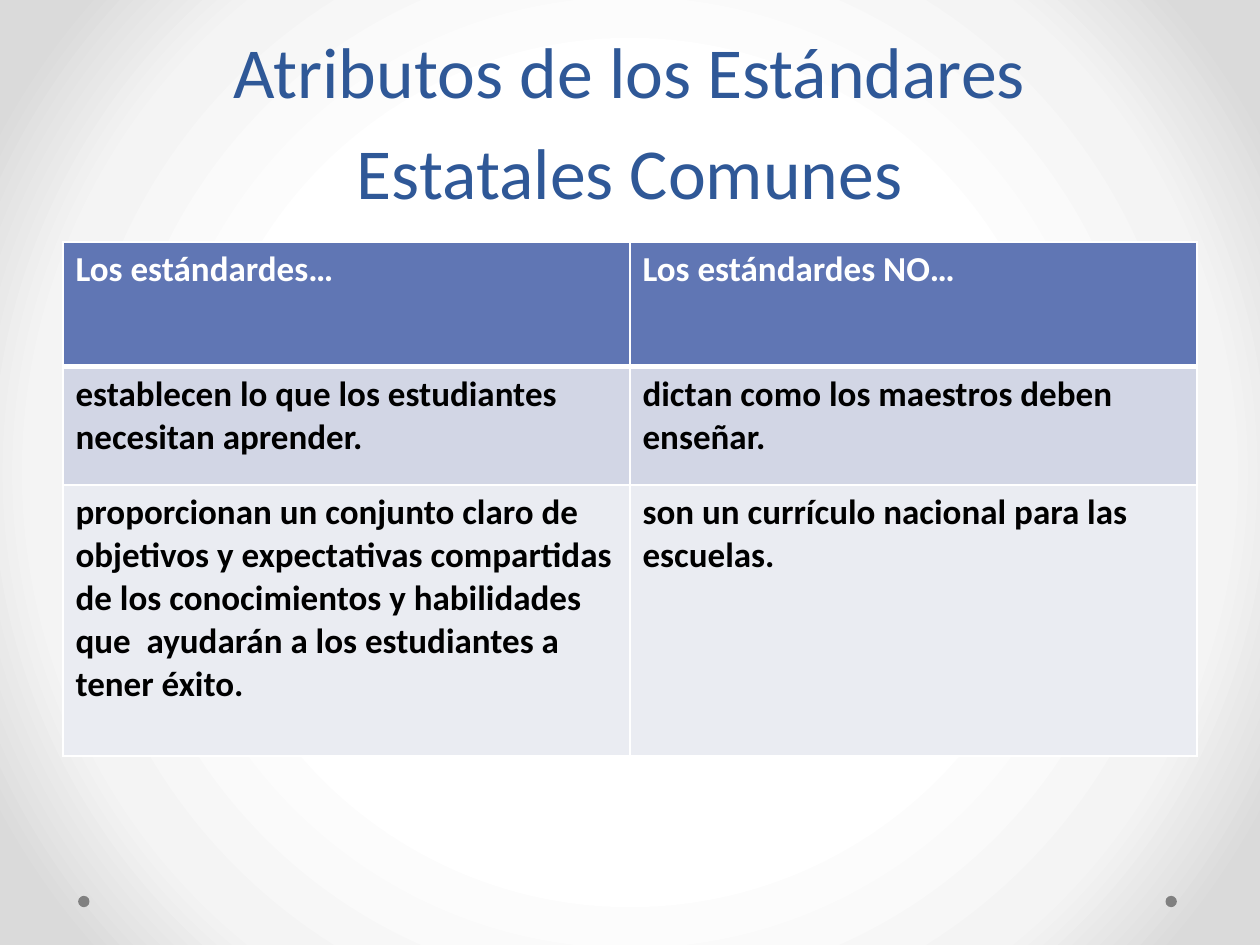
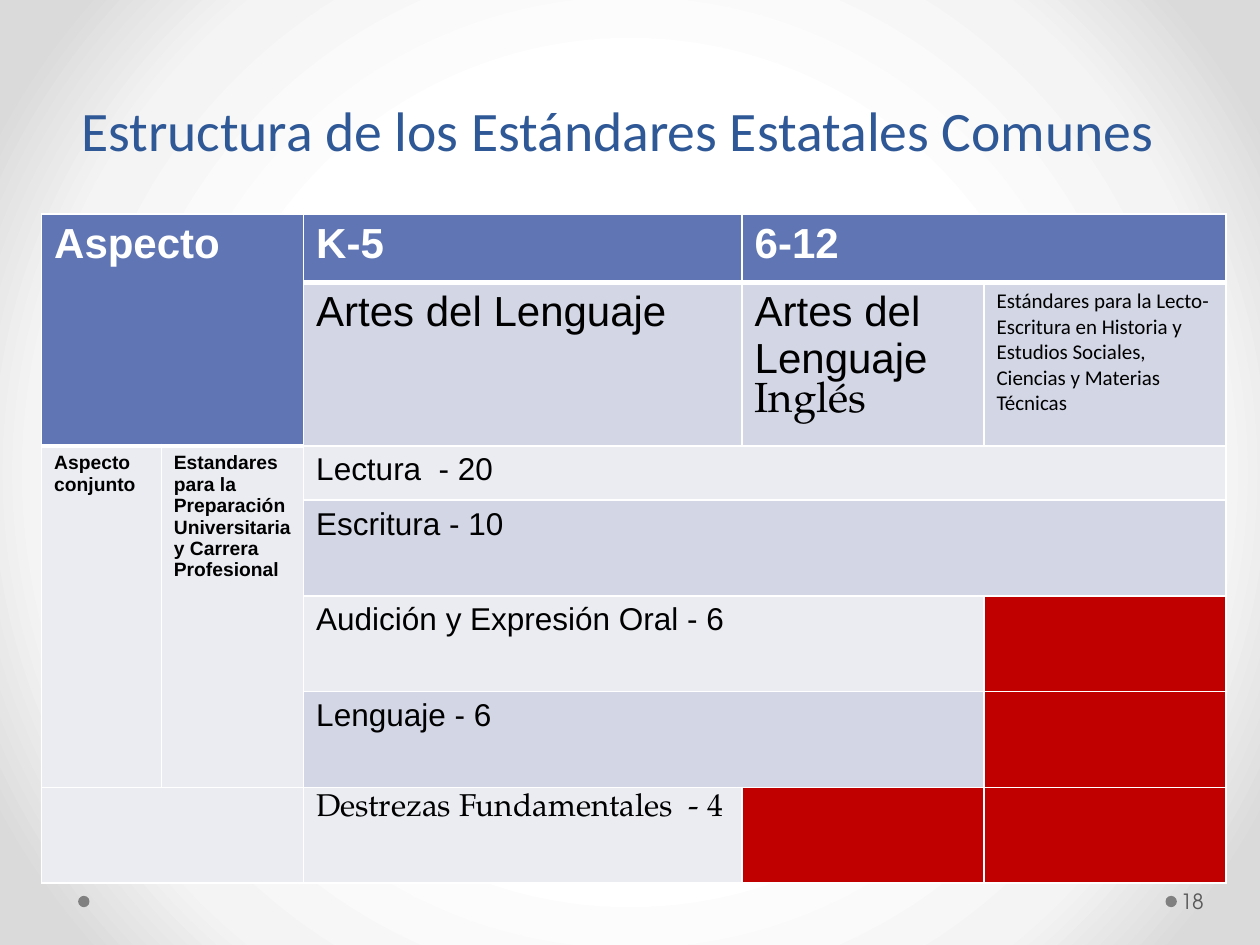
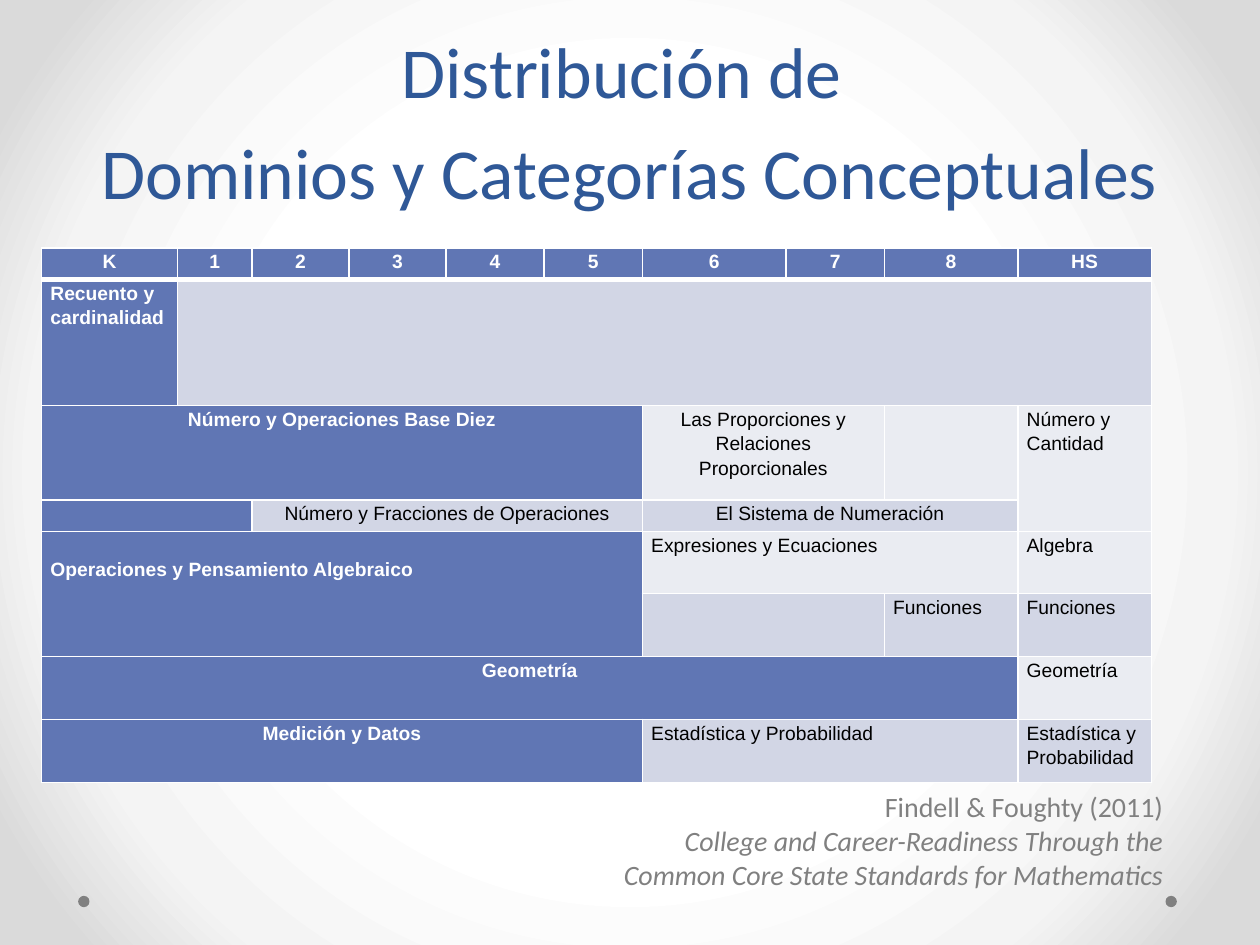
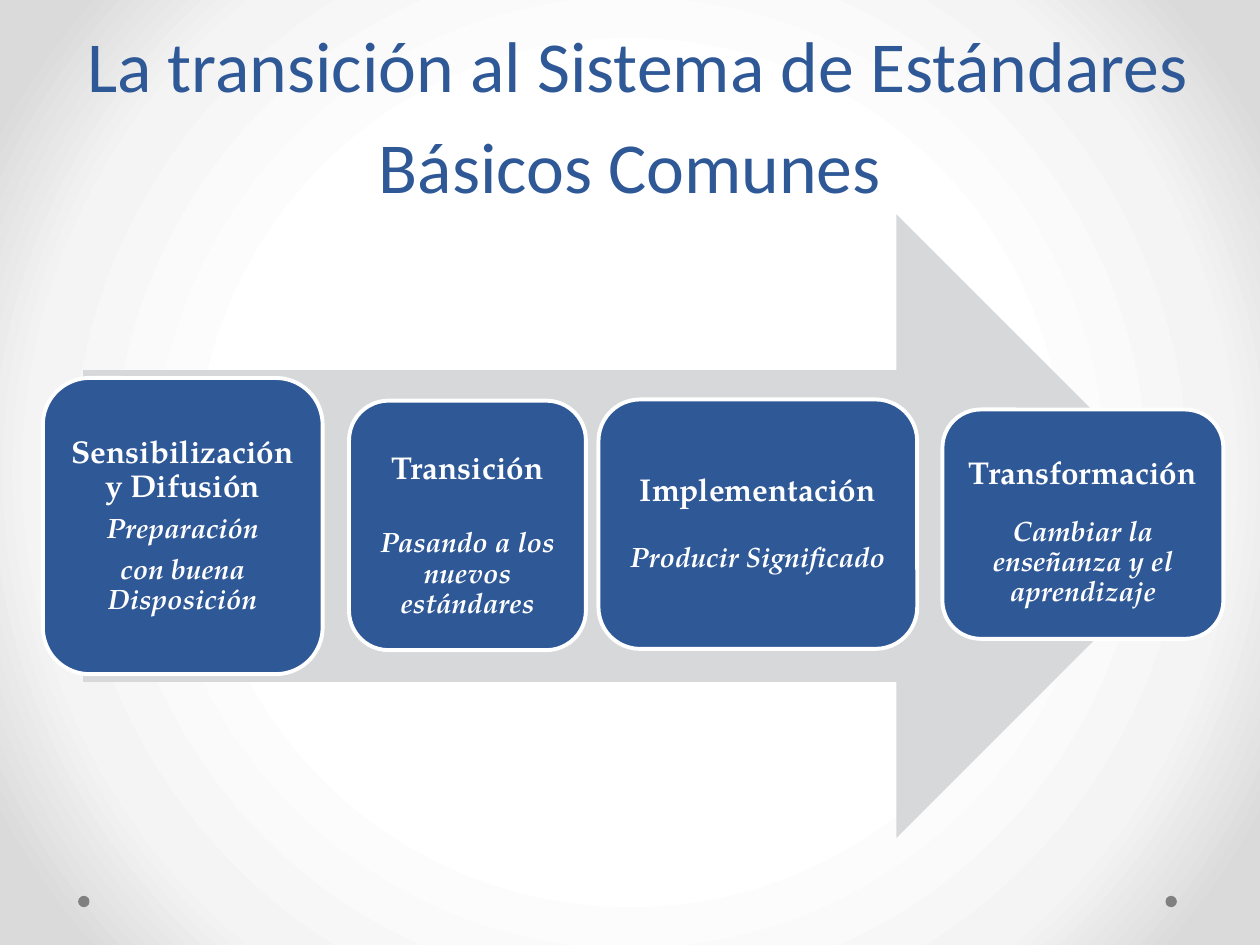
from dataclasses import dataclass, replace

from lxml.etree import SubElement
from pptx import Presentation
from pptx.dml.color import RGBColor
from pptx.enum.shapes import MSO_SHAPE
from pptx.enum.text import MSO_ANCHOR, PP_ALIGN
from pptx.oxml.ns import qn
from pptx.util import Inches, Pt

WHITE = RGBColor(0xFF, 0xFF, 0xFF)
BLACK = RGBColor(0, 0, 0)
NAVY = RGBColor(0x2F, 0x58, 0x97)
BLUE = RGBColor(0x60, 0x76, 0xB4)
BANDS = (RGBColor(0xEA, 0xEC, 0xF2), RGBColor(0xD2, 0xD6, 0xE5))
RED = RGBColor(0xC0, 0, 0)
GRAY = RGBColor(0x80, 0x80, 0x80)
DARK = RGBColor(0x59, 0x59, 0x59)
SILVER = RGBColor(0xD6, 0xD8, 0xD9)
GLOW = ((50, WHITE), (76, RGBColor(0xF4, 0xF4, 0xF4)), (92, RGBColor(0xDA, 0xDA, 0xDA)))
SERIF = "TeX Gyre Pagella"
LEFT, MID, RIGHT = PP_ALIGN.LEFT, PP_ALIGN.CENTER, PP_ALIGN.RIGHT


@dataclass(frozen=True)
class Face:
    size: float
    font: str = "Calibri"
    color: RGBColor = BLACK
    bold: bool = False
    italic: bool = False


@dataclass
class Cell:
    """A table cell; without a fill it takes the head or band colour of its row."""
    row: int
    col: int
    runs: tuple = ()
    down: int = 1
    across: int = 1
    fill: RGBColor = None
    align: PP_ALIGN = LEFT
    drop: float = 0


def write(par, runs, align=LEFT):
    """Add (text, face) runs to a paragraph; a newline becomes a line break."""
    par.alignment = align
    for text, face in runs:
        for num, line in enumerate(text.split("\n")):
            if num:
                par.add_line_break()
            run = par.add_run()
            run.text = line
            font = run.font
            font.size, font.name = Pt(face.size), face.font
            font.bold, font.italic = face.bold, face.italic
            font.color.rgb = face.color


def pad(frame, left, top, right, low):
    frame.margin_left, frame.margin_top = Inches(left), Inches(top)
    frame.margin_right, frame.margin_bottom = Inches(right), Inches(low)


def label(slide, box, runs, align=LEFT, anchor=MSO_ANCHOR.TOP):
    frame = slide.shapes.add_textbox(*map(Inches, box)).text_frame
    frame.word_wrap = True
    frame.vertical_anchor = anchor
    write(frame.paragraphs[0], runs, align)
    return frame


def title(slide, text, box=(0.5, 0, 9, 1.75), size=41):
    frame = label(slide, box, [(text, Face(size, color=NAVY))], MID, MSO_ANCHOR.BOTTOM)
    frame.paragraphs[0].line_spacing = Pt(58)


def shape(slide, kind, box, fill, line=None):
    item = slide.shapes.add_shape(kind, *map(Inches, box))
    item.shadow.inherit = False
    item.fill.solid()
    item.fill.fore_color.rgb = fill
    if line:
        item.line.color.rgb = line
        item.line.width = Pt(2.25)
    else:
        item.line.fill.background()
    return item


def backdrop(master):
    """Give the master a round gradient from the centre."""
    master.background.fill.gradient()
    grad = master.element.find(".//" + qn("a:gradFill"))
    for child in list(grad):
        grad.remove(child)
    stops = SubElement(grad, qn("a:gsLst"))
    for place, color in GLOW:
        stop = SubElement(stops, qn("a:gs"), pos=str(place * 1000))
        SubElement(stop, qn("a:srgbClr"), val=str(color))
    ring = SubElement(grad, qn("a:path"), path="circle")
    SubElement(ring, qn("a:fillToRect"), l="50000", t="50000", r="50000", b="50000")


def dots(slide, master):
    """Draw the two footer dots and move them to the master."""
    for num, left in enumerate((9.25, 0.62)):
        dot = shape(slide, MSO_SHAPE.OVAL, (left, 7.11, 0.09, 0.09), GRAY)
        dot.element.nvSpPr.cNvPr.set("id", str(20 + num))
        master.shapes.element.append(dot.element)


def edge(cell, side, width):
    line = SubElement(cell._tc.get_or_add_tcPr(), qn("a:ln" + side), w=str(Pt(width)))
    fill = SubElement(line, qn("a:solidFill"))
    SubElement(fill, qn("a:srgbClr"), val=str(WHITE))


def paint(cell, fill, head, top):
    """Set borders and fill, and keep an empty cell from stretching its row."""
    edge(cell, "L", 1)
    edge(cell, "R", 1)
    if top:
        edge(cell, "T", 1)
    edge(cell, "B", 3 if head else 1)
    cell.fill.solid()
    cell.fill.fore_color.rgb = fill


def grid(slide, left, top, cols, rows, cells, inset=(0.1, 0.05)):
    area = map(Inches, (left, top, sum(cols), sum(rows)))
    table = slide.shapes.add_table(len(rows), len(cols), *area).table
    for num, width in enumerate(cols):
        table.columns[num].width = Inches(width)
    for num, height in enumerate(rows):
        table.rows[num].height = Inches(height)
    for item in cells:
        head = item.row == 0
        fill = item.fill or (BLUE if head else BANDS[item.row % 2])
        first = table.cell(item.row, item.col)
        for row in range(item.row, item.row + item.down):
            for col in range(item.col, item.col + item.across):
                cell = table.cell(row, col)
                paint(cell, fill, head, row == 0)
                side, lid = inset
                pad(cell, side, lid + item.drop, side, lid)
                if cell is not first and (row, col) != (item.row, item.col) or not item.runs:
                    SubElement(cell.text_frame.paragraphs[0]._p, qn("a:endParaRPr"), sz="1100")
        if item.down * item.across > 1:
            first.merge(table.cell(item.row + item.down - 1, item.col + item.across - 1))
        par = first.text_frame.paragraphs[0]
        write(par, item.runs, item.align)
        if inset[1] == 0 and item.runs:
            par.line_spacing = 1.15


def traits(slide):
    title(slide, "Atributos de los Estándares\nEstatales Comunes")
    pairs = (
        ("Los estándardes…", "Los estándardes NO…"),
        ("establecen lo que los estudiantes necesitan aprender.",
         "dictan como los maestros deben enseñar."),
        ("proporcionan un conjunto claro de objetivos y expectativas compartidas de los "
         "conocimientos y habilidades que  ayudarán a los estudiantes a tener éxito.",
         "son un currículo nacional para las escuelas."),
    )
    cells = [Cell(row, col, ((text, Face(20, color=BLACK if row else WHITE, bold=True)),))
             for row, pair in enumerate(pairs) for col, text in enumerate(pair)]
    grid(slide, 0.5, 1.92, (4.5, 4.5), (0.99, 0.94, 2.15), cells)


def layout(slide):
    head = Face(24, "Arial", WHITE, True)
    big = Face(24, "Arial")
    small = Face(11, "Arial", bold=True)
    body = Face(18, "Arial")
    cells = [
        Cell(0, 0, (("Aspecto", head),), 2, 2),
        Cell(0, 2, (("K-5", head),)),
        Cell(0, 3, (("6-12", head),), across=2),
        Cell(1, 2, (("Artes del Lenguaje", big),)),
        Cell(1, 3, (("Artes del Lenguaje ", big), ("Inglés", replace(big, font=SERIF)))),
        Cell(1, 4, (("Estándares para la Lecto-Escritura en Historia y Estudios Sociales, "
                     "Ciencias y Materias Técnicas", Face(12)),)),
        Cell(2, 0, (("Aspecto conjunto", small),), down=4),
        Cell(2, 1, (("Estandares para la Preparación Universitaria y Carrera Profesional",
                     small),), down=4),
        Cell(2, 2, (("Lectura  - 20", body),), across=3),
        Cell(3, 2, (("Escritura - 10", body),), across=3),
        Cell(4, 2, (("Audición y Expresión Oral - 6", body),), across=2),
        Cell(5, 2, (("Lenguaje - 6", body),), across=2),
        Cell(6, 0, across=2),
        Cell(6, 2, (("Destrezas Fundamentales  - 4", replace(body, font=SERIF)),)),
    ]
    cells += [Cell(row, col, fill=RED) for row, col in ((4, 4), (5, 4), (6, 3), (6, 4))]
    rows = (0.54, 0.98, 0.43) + 4 * (0.76,)
    grid(slide, 0.33, 1.7, (0.95, 1.13, 3.48, 1.92, 1.92), rows, cells)
    title(slide, "Estructura de los Estándares Estatales Comunes", (0.4, 0.17, 9, 1.17), 31.8)
    page = label(slide, (9.34, 6.95, 0.61, 0.4),
                 [("18", Face(12, "TeX Gyre Adventor", DARK))], anchor=MSO_ANCHOR.MIDDLE)
    pad(page, 0.03, 0.05, 0.05, 0.05)


def domains(slide):
    title(slide, "Distribución de \nDominios y Categorías Conceptuales")
    note = Face(16, color=GRAY)
    label(slide, (3.01, 6.22, 6.32, 0.91), [
        ("Findell & Foughty (2011)\n", note),
        ("College and Career-Readiness Through the\n"
         "Common Core State Standards for Mathematics", replace(note, italic=True)),
    ], RIGHT)

    def plain(row, col, text, across=1, align=LEFT, down=1):
        return Cell(row, col, ((text, Face(11, "Arial")),), down, across, align=align)

    def strong(row, col, text, across=1, align=MID, down=1, drop=0):
        runs = ((text, Face(11, "Arial", WHITE, True)),)
        return Cell(row, col, runs, down, across, BLUE, align, drop)

    grades = ("K", "1", "2", "3", "4", "5", "6", "7", "8", "HS")
    cells = [strong(0, col, grade) for col, grade in enumerate(grades)]
    cells += [
        strong(1, 0, "Recuento y cardinalidad", align=LEFT),
        Cell(1, 1, across=9),
        strong(2, 0, "Número y Operaciones Base Diez", 6),
        plain(2, 6, "Las Proporciones y Relaciones Proporcionales", 2, MID),
        Cell(2, 8),
        plain(2, 9, "Número y Cantidad", down=2),
        Cell(3, 0, across=2, fill=BLUE),
        plain(3, 2, "Número y Fracciones de Operaciones", 4, MID),
        plain(3, 6, "El Sistema de Numeración", 3, MID),
        strong(4, 0, "Operaciones y Pensamiento Algebraico", 6, LEFT, 2, 0.19),
        plain(4, 6, "Expresiones y Ecuaciones", 3),
        plain(4, 9, "Algebra"),
        Cell(5, 6, across=2),
        plain(5, 8, "Funciones"),
        plain(5, 9, "Funciones"),
        strong(6, 0, "Geometría", 9),
        plain(6, 9, "Geometría"),
        strong(7, 0, "Medición y Datos", 6),
        plain(7, 6, "Estadística y Probabilidad", 3),
        plain(7, 9, "Estadística y Probabilidad"),
    ]
    cols = (1.08, 0.59, 0.77, 0.77, 0.78, 0.78, 1.14, 0.78, 1.06, 1.06)
    rows = (0.25, 1, 0.75, 0.25, 0.49, 0.5, 0.5, 0.5)
    grid(slide, 0.33, 1.97, cols, rows, cells, (0.07, 0))


def stage(slide, box, name, lines, gap, drop):
    """Draw a step: its name, a gap in points, then lines in italics."""
    item = shape(slide, MSO_SHAPE.ROUNDED_RECTANGLE, box, NAVY, WHITE)
    frame = item.text_frame
    frame.word_wrap = True
    frame.vertical_anchor = MSO_ANCHOR.MIDDLE
    pad(frame, 0.07, 0.07 + drop, 0.07, 0.07)
    face = Face(18, SERIF, WHITE, True)
    par = frame.paragraphs[0]
    write(par, [(name, face)], MID)
    par.line_spacing = 0.9
    for num, line in enumerate(lines):
        par = frame.add_paragraph()
        write(par, [(line, replace(face, size=16, italic=True))], MID)
        par.line_spacing = 0.9
        par.space_before = Pt(6 if num else gap)


def steps(slide):
    title(slide, "La transición al Sistema de Estándares Básicos Comunes ",
          (0.17, 0.25, 9.79, 1.45))
    shape(slide, MSO_SHAPE.RIGHT_ARROW, (0.66, 1.7, 8.93, 4.95), SILVER)
    stages = (
        ((0.34, 3, 2.22, 2.35), "Sensibilización y Difusión",
         ("Preparación", "con buena Disposición"), 6, 0),
        ((2.77, 3.18, 1.88, 1.98), "Transición",
         ("Pasando a los nuevos estándares",), 24, 0.17),
        ((4.75, 3.17, 2.53, 1.98), "Implementación", ("Producir Significado",), 20, 0),
        ((7.48, 3.25, 2.23, 1.82), "Transformación",
         ("Cambiar la enseñanza y el aprendizaje",), 15, 0.13),
    )
    for part in stages:
        stage(slide, *part)


def main():
    deck = Presentation()
    deck.slide_width, deck.slide_height = Inches(10), Inches(7.5)
    backdrop(deck.slide_master)
    for num, build in enumerate((traits, layout, domains, steps)):
        slide = deck.slides.add_slide(deck.slide_layouts[6])
        if num == 0:
            dots(slide, deck.slide_master)
        build(slide)
    deck.save("out.pptx")


if __name__ == "__main__":
    main()
